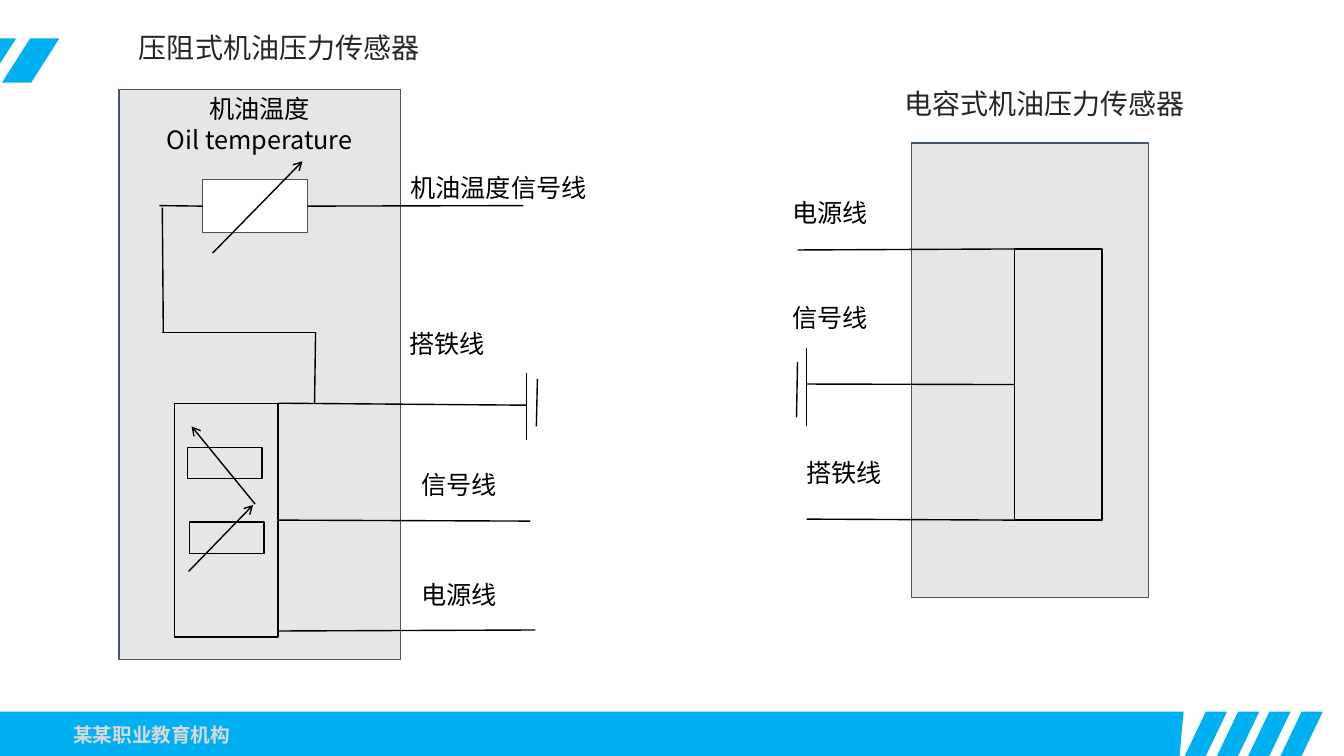
from lxml import etree
from pptx import Presentation
from pptx import util as u
from pptx.dml.color import RGBColor
from pptx.enum import shapes, text
from pptx.oxml.ns import qn

PX = 9144  # 100 px to the inch
FONT = "Noto Sans CJK SC"
COLORS = {"blue": "00B0F0", "panel": "E7E6E6", "edge": "44546A", "white": "FFFFFF",
          "black": "000000", "title": "262626", "footer": "D9D9D9"}

# Slanted stripes: first left, step, count, top, height, slant, width
STRIPES = [(1175, 31.67, 4, 706, 44, 21, 21), (-41, 43, 2, 38, 44, 28, 29)]
FOOTER_BAR = [(1174, 706), (1170, 750), (-12, 750), (0, 706)]

# Rectangles: name -> (left, top, width, height), fill, line
RECTANGLES = {
    "resistive panel": ((118, 89, 279, 565), "panel", "edge"),
    "thermistor": ((201, 178, 104, 53), "white", "edge"),
    "bridge": ((173, 400, 103, 232), None, "black"),
    "upper resistor": ((186, 444, 74, 31), None, "black"),
    "lower resistor": ((188, 518, 74, 31), None, "black"),
    "capacitive panel": ((904, 142, 235, 451), "panel", "edge"),
    "capacitor": ((1006, 247, 87, 269), None, "black"),
}

# Wires that start at the middle of a side: rectangle, side, end
LEFT, RIGHT = 1, 3
JOINED_WIRES = [
    ("thermistor", RIGHT, (519, 204)),
    ("thermistor", LEFT, (158, 204)),
    ("bridge", RIGHT, (526, 517)),
    ("capacitor", LEFT, (800, 381)),
]
# Other wires and ground plates: start, end
WIRES = [
    ((161, 206), (162, 330)), ((161, 330), (313, 330)), ((313, 330), (312, 400)),
    ((276, 400), (522, 402)), ((276, 626), (531, 625)),
    ((522, 370), (522, 437)), ((533, 376), (532, 423)),
    ((1006, 516), (800, 515)), ((1006, 247), (791, 248)),
    ((800, 423), (800, 345)), ((790, 414), (791, 359)),
]
ARROWS = [((211, 251), (300, 160)), ((187, 567), (251, 501)), ((253, 500), (190, 423))]

# Texts: lines, (left, top, width, height)
TITLES = [
    (["压阻式机油压力传感器"], (128, 25, 308, 44)),
    (["电容式机油压力传感器"], (887, 81, 308, 44)),
]
LABELS = [
    (["机油温度信号线"], (397, 166, 198, 40)),
    (["搭铁线"], (396, 321, 111, 40)),
    (["信号线"], (408, 461, 111, 40)),
    (["电源线"], (408, 570, 111, 40)),
    (["电源线"], (776, 191, 111, 40)),
    (["信号线"], (776, 295, 111, 40)),
    (["搭铁线"], (790, 449, 111, 40)),
]
PANEL_HEADING = (["机油温度", "Oil temperature"], (118, 88, 279, 71))
FOOTER = (["某某职业教育机构"], (56, 711, 189, 36))

presentation = Presentation()
presentation.slide_width, presentation.slide_height = u.Inches(13.33), u.Inches(7.5)
slide = presentation.slides.add_slide(presentation.slide_layouts[6])


def emu(lengths):
    return [round(length * PX) for length in lengths]


def color(name):
    return RGBColor.from_string(COLORS[name])


def style(shape, fill, line):
    shape.shadow.inherit = False
    if fill:
        shape.fill.solid()
        shape.fill.fore_color.rgb = color(fill)
    else:
        shape.fill.background()
    if line:
        shape.line.color.rgb = color(line)
        shape.line.width = u.Pt(1)
    else:
        shape.line.fill.background()


def add_polygon(points):
    builder = slide.shapes.build_freeform(*points[0], scale=PX)
    builder.add_line_segments(points[1:], close=True)
    style(builder.convert_to_shape(), "blue", None)


def add_wire(start, end, arrow=False):
    wire = slide.shapes.add_connector(shapes.MSO_CONNECTOR.STRAIGHT, *emu(start + end))
    wire.line.color.rgb = color("black")
    wire.line.width = u.Pt(1)
    if arrow:
        etree.SubElement(wire.line._get_or_add_ln(), qn("a:tailEnd"), type="arrow")
    etree.SubElement(wire._element.spPr, qn("a:effectLst"))
    return wire


def add_text(lines, box, size, ink, centred=False, middle=False, bold=False):
    frame = slide.shapes.add_textbox(*emu(box)).text_frame
    frame.word_wrap = True
    if middle:
        frame.vertical_anchor = text.MSO_ANCHOR.MIDDLE
    frame.text = "\n".join(lines)
    for paragraph in frame.paragraphs:
        if centred:
            paragraph.alignment = text.PP_ALIGN.CENTER
        font = paragraph.font
        font.size, font.bold, font.name = u.Pt(size), bold, FONT
        font.color.rgb = color(ink)
        etree.SubElement(font._element, qn("a:ea"), typeface=FONT)


# Footer and corner decoration
for first, step, count, top, height, slant, width in STRIPES:
    for i in range(count):
        left = round(first + i * step)
        add_polygon([(left + slant, top), (left, top + height),
                     (left + width, top + height), (left + slant + width, top)])
add_polygon(FOOTER_BAR)
add_text(*FOOTER, 14, "footer", centred=True, middle=True, bold=True)

# Sensor panels and components
parts = {}
for name, (box, fill, line) in RECTANGLES.items():
    parts[name] = slide.shapes.add_shape(shapes.MSO_SHAPE.RECTANGLE, *emu(box))
    style(parts[name], fill, line)

# Wiring
for name, side, end in JOINED_WIRES:
    add_wire(end, end).begin_connect(parts[name], side)
for start, end in WIRES:
    add_wire(start, end)
for start, end in ARROWS:
    add_wire(start, end, arrow=True)

# Titles and labels
for title in TITLES:
    add_text(*title, 20, "title")
add_text(*PANEL_HEADING, 18, "black", centred=True)
for label in LABELS:
    add_text(*label, 18, "black")

presentation.save("out.pptx")
